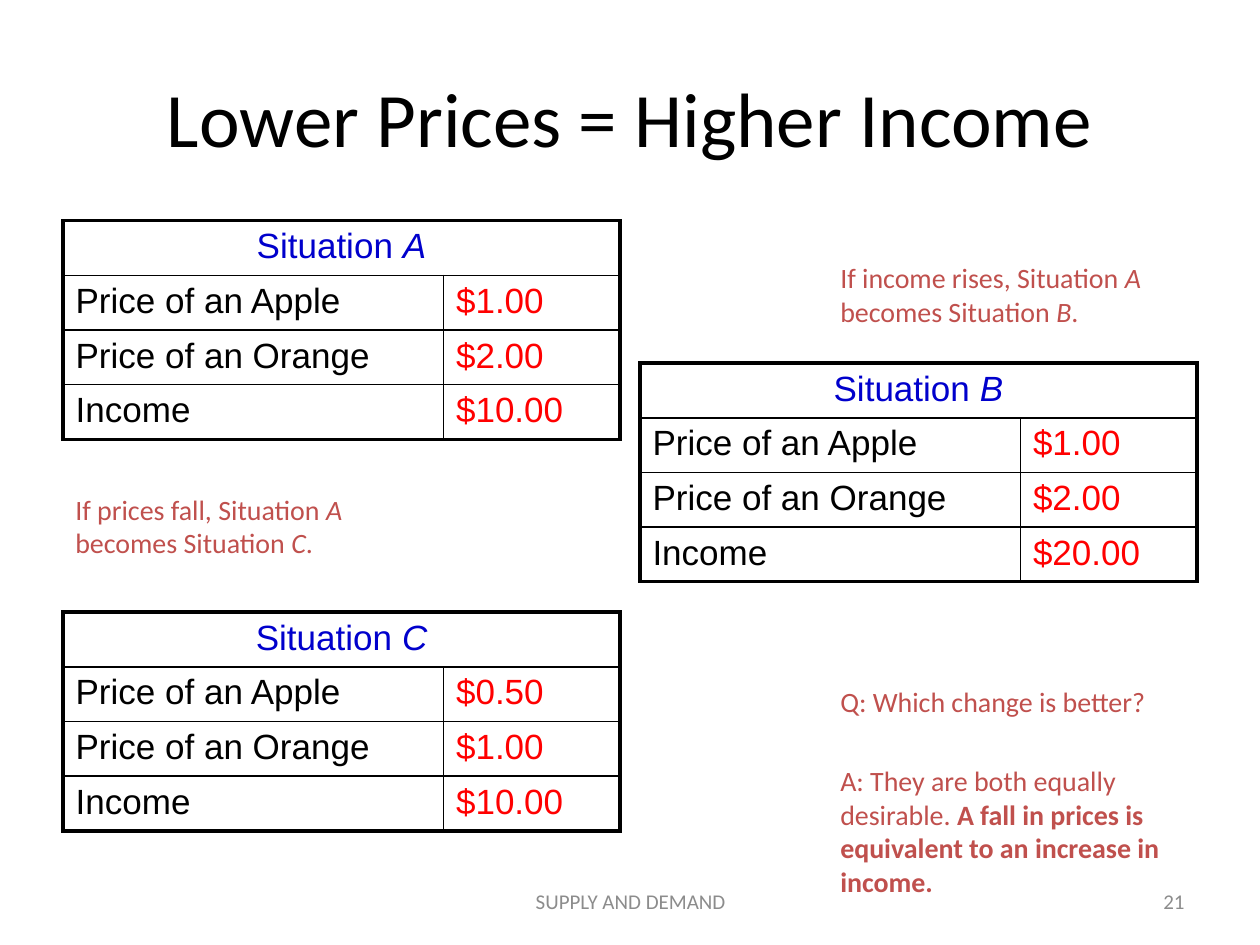
from lxml import etree
from pptx import Presentation, util as u
from pptx.dml.color import RGBColor
from pptx.enum import text as t
from pptx.oxml import ns

COLORS = {"ink": "000000", "white": "FFFFFF", "heading": "0000CC",
          "price": "FF0000", "remark": "C0504D", "footer": "8C8C8C"}
THICK, THIN = 2.25, 1
ROW_HEIGHT = 1.04
COLUMN_WIDTHS = (7.67, 3.56)
REMARK_WIDTH = 7.87
LEFT, RIGHT, REMARK_LEFT = 1.27, 12.9, 16.69

ITEMS = ("Price of an Apple", "Price of an Orange", "Income")
SITUATIONS = [
    ("Situation *A", LEFT, 4.45, ("$1.00", "$2.00", "$10.00")),
    ("Situation *B", RIGHT, 7.32, ("$1.00", "$2.00", "$20.00")),
    ("Situation *C", LEFT, 12.34, ("$0.50", "$1.00", "$10.00")),
]
REMARKS = [
    ("If prices fall, Situation *A* becomes Situation *C*.", LEFT, 9.8, 1.62, "italic"),
    ("If income rises, Situation *A* becomes Situation *B*.", REMARK_LEFT, 5.13, 1.62, "italic"),
    ("Q: Which change is better?", REMARK_LEFT, 13.67, 0.94, "italic"),
    ("A: They are both equally desirable. *A fall in prices is equivalent "
     "to an increase in income.", REMARK_LEFT, 15.27, 2.97, "bold"),
]
TITLE = ("Lower Prices = Higher Income", 1.27, 0.76, 22.86, 3.18)
FOOTER = ("SUPPLY AND DEMAND", 8.69, 17.65, 8.05, 1.02)
PAGE_NUMBER = ("21", 18.21, 17.65, 5.92, 1.02)


def write(frame, content, size=16, font="Calibri", color="ink",
          align=t.PP_ALIGN.LEFT, emphasis="italic"):
    paragraph = frame.paragraphs[0]
    paragraph.alignment = align
    for index, part in enumerate(content.split("*")):
        run = paragraph.add_run()
        run.text = part
        run.font.size = u.Pt(size)
        run.font.name = font
        run.font.color.rgb = RGBColor.from_string(COLORS[color])
        if index % 2:
            setattr(run.font, emphasis, True)


def place(slide, content, left, top, width, height,
          anchor=t.MSO_ANCHOR.TOP, **style):
    frame = slide.shapes.add_textbox(*map(u.Cm, (left, top, width, height))).text_frame
    frame.word_wrap = True
    frame.vertical_anchor = anchor
    write(frame, content, **style)


def rule_cell(cell, **widths):
    cell.fill.solid()
    cell.fill.fore_color.rgb = RGBColor.from_string(COLORS["white"])
    properties = cell._tc.get_or_add_tcPr()
    for position, side in enumerate("LRTB"):
        line = etree.Element(ns.qn(f"a:ln{side}"), w=str(u.Pt(widths[side])))
        fill = etree.SubElement(line, ns.qn("a:solidFill"))
        etree.SubElement(fill, ns.qn("a:srgbClr"), val=COLORS["ink"])
        properties.insert(position, line)


def add_situation(slide, heading, left, top, prices):
    rows = len(ITEMS) + 1
    table = slide.shapes.add_table(
        rows, 2, u.Cm(left), u.Cm(top),
        u.Cm(sum(COLUMN_WIDTHS)), u.Cm(rows * ROW_HEIGHT)).table
    table.first_row = table.horz_banding = False
    for column, width in zip(table.columns, COLUMN_WIDTHS):
        column.width = u.Cm(width)
    for row in table.rows:
        row.height = u.Cm(ROW_HEIGHT)
    for row in range(rows):
        for column in range(2):
            rule_cell(table.cell(row, column),
                      L=THIN if column else THICK,
                      R=THICK if column or row == 0 else THIN,
                      T=THIN if row else THICK,
                      B=THICK if row == rows - 1 else THIN)
    table.cell(0, 0).merge(table.cell(0, 1))
    cell_style = {"size": 20, "font": "Arial"}
    write(table.cell(0, 0).text_frame, heading, color="heading",
          align=t.PP_ALIGN.CENTER, **cell_style)
    for row, (item, price) in enumerate(zip(ITEMS, prices), 1):
        write(table.cell(row, 0).text_frame, item, **cell_style)
        write(table.cell(row, 1).text_frame, price, color="price", **cell_style)


def main():
    deck = Presentation()
    deck.slide_width, deck.slide_height = u.Cm(25.4), u.Cm(19.05)
    slide = deck.slides.add_slide(deck.slide_layouts[6])
    middle = t.MSO_ANCHOR.MIDDLE
    place(slide, *FOOTER, anchor=middle, size=12, color="footer", align=t.PP_ALIGN.CENTER)
    place(slide, *PAGE_NUMBER, anchor=middle, size=12, color="footer", align=t.PP_ALIGN.RIGHT)
    place(slide, *TITLE, anchor=middle, size=44, align=t.PP_ALIGN.CENTER)
    for situation in SITUATIONS:
        add_situation(slide, *situation)
    for remark, left, top, height, emphasis in REMARKS:
        place(slide, remark, left, top, REMARK_WIDTH, height,
              color="remark", emphasis=emphasis)
    deck.save("out.pptx")


if __name__ == "__main__":
    main()
